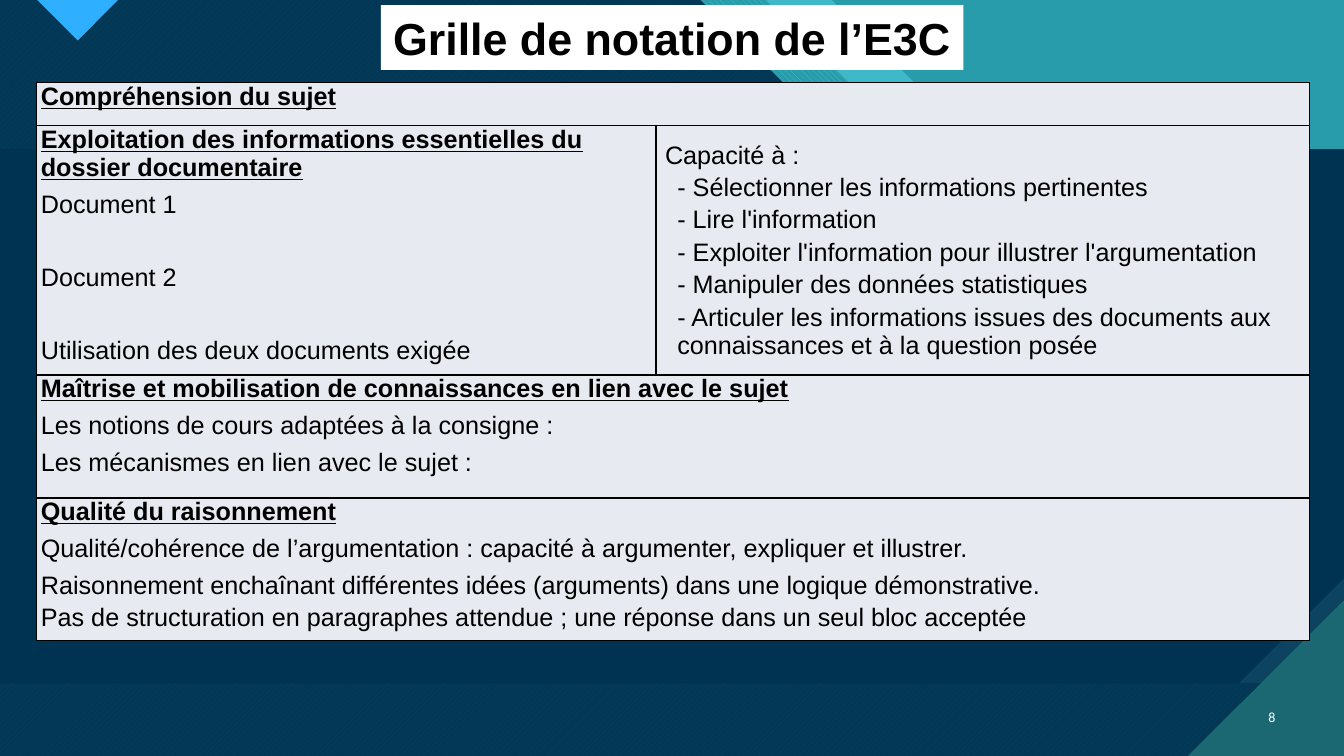
import pptx
import pptx.util
import pptx.dml.color
import pptx.enum.dml
import pptx.enum.text
import pptx.oxml
import pptx.oxml.ns
import lxml.etree

Cm = pptx.util.Cm
Pt = pptx.util.Pt
PATTERN = pptx.enum.dml.MSO_PATTERN
ANCHOR = pptx.enum.text.MSO_ANCHOR
ALIGN = pptx.enum.text.PP_ALIGN
WIDTH, HEIGHT = 33.87, 19.05
COLORS = {
    "teal": "299CAB", "turquoise": "47C3D3", "petrol": "1B6872",
    "navy": "003352", "blue": "2FAFFF", "steel": "0C4360",
    "cell": "E7EAF0", "white": "FFFFFF", "black": "000000",
}


class Painter:
    font = "Arial"

    def __init__(self, deck):
        self.page = deck.slides.add_slide(deck.slide_layouts[5])
        self.shapes = self.page.shapes

    def color(self, name):
        return pptx.dml.color.RGBColor.from_string(COLORS[name])

    def solid(self, fill, name, opacity=100):
        fill.solid()
        fill.fore_color.rgb = self.color(name)
        if opacity < 100:
            tint = fill._xPr.find(".//" + pptx.oxml.ns.qn("a:srgbClr"))
            alpha = lxml.etree.SubElement(tint, pptx.oxml.ns.qn("a:alpha"))
            alpha.set("val", str(opacity * 1000))

    def background(self, name):
        self.solid(self.page.background.fill, name)

    def polygon(self, points, name, back=None, pattern=None, opacity=100):
        corners = [(Cm(x), Cm(y)) for x, y in points]
        builder = self.shapes.build_freeform(*corners[0])
        builder.add_line_segments(corners[1:], close=True)
        shape = builder.convert_to_shape()
        shape.shadow.inherit = False
        shape.line.fill.background()
        if pattern is None:
            self.solid(shape.fill, name, opacity)
        else:
            shape.fill.patterned()
            shape.fill.pattern = pattern
            shape.fill.fore_color.rgb = self.color(name)
            shape.fill.back_color.rgb = self.color(back)

    def style(self, para, size, name="black", bold=False, font=None):
        para.font.size = Pt(size)
        para.font.name = font or self.font
        para.font.bold = bold
        para.font.color.rgb = self.color(name)

    def title(self, text, left, top, width, height):
        box = self.shapes.title
        box.left, box.top, box.width, box.height = map(Cm, (left, top, width, height))
        self.solid(box.fill, "white")
        frame = box.text_frame
        frame.text = text
        frame.word_wrap = False
        frame.auto_size = pptx.enum.text.MSO_AUTO_SIZE.NONE
        frame.vertical_anchor = ANCHOR.MIDDLE
        frame.paragraphs[0].alignment = ALIGN.CENTER
        self.style(frame.paragraphs[0], 32, bold=True)
        self.shapes._spTree.append(box._element)

    def page_number(self, text, left, top, width, height):
        box = self.shapes.add_textbox(*map(Cm, (left, top, width, height)))
        frame = box.text_frame
        frame.text = text
        frame.word_wrap = True
        frame.vertical_anchor = ANCHOR.MIDDLE
        frame.paragraphs[0].alignment = ALIGN.RIGHT
        self.style(frame.paragraphs[0], 10, "white", font="Calibri")

    def table(self, left, top, columns, rows):
        frame = self.shapes.add_table(len(rows), len(columns), Cm(left), Cm(top),
                                      Cm(sum(columns)), Cm(sum(rows)))
        grid = frame.table
        grid.first_row = grid.horz_banding = False
        for column, width in zip(grid.columns, columns):
            column.width = Cm(width)
        for row, height in zip(grid.rows, rows):
            row.height = Cm(height)
        for cell in grid.iter_cells():
            self.borders(cell)
            self.solid(cell.fill, "cell")
        return grid

    def borders(self, cell):
        properties = cell._tc.get_or_add_tcPr()
        for side in ("lnL", "lnR", "lnT", "lnB"):
            properties.append(pptx.oxml.parse_xml(
                f'<a:{side} {pptx.oxml.ns.nsdecls("a")} w="12700"><a:solidFill>'
                f'<a:srgbClr val="{COLORS["black"]}"/></a:solidFill></a:{side}>'))

    def fill_cell(self, cell, lines, margin=0.12, heading=True):
        cell.margin_left = cell.margin_right = Cm(margin)
        cell.margin_top = cell.margin_bottom = 0
        frame = cell.text_frame
        frame.text = "\n".join(text for text, space, indent in lines)
        for number, (para, line) in enumerate(zip(frame.paragraphs, lines)):
            text, space, indent = line
            is_heading = heading and number == 0
            self.style(para, 18, bold=is_heading)
            para.font.underline = is_heading
            para.space_before = Pt(space)
            if indent:
                properties = para._p.get_or_add_pPr()
                properties.set("marL", str(Cm(indent)))
                properties.set("indent", "0")


def draw_background(painter):
    bottom = [(WIDTH, HEIGHT), (0, HEIGHT)]
    painter.background("teal")
    painter.polygon([(0, 0), (20.96, 0), (28.5, 7.54), (31.34, 7.54), (WIDTH, 10.06)]
                    + bottom, "turquoise", opacity=74)
    painter.polygon([(0, 0), (19.3, 0), (26.87, 7.54), (30.07, 7.54), (WIDTH, 11.35)]
                    + bottom, "turquoise", "teal", PATTERN.WIDE_DOWNWARD_DIAGONAL)
    slope = [(0, 0), (17.65, 0), (25.2, 7.54), (28.4, 7.54), (WIDTH, 13)] + bottom
    painter.polygon(slope, "turquoise", "petrol", PATTERN.WIDE_UPWARD_DIAGONAL)
    painter.polygon(slope, "navy", opacity=90)
    painter.polygon([(0.94, 0), (1.96, 1.02), (2.97, 0)],
                    "blue", "petrol", PATTERN.DARK_HORIZONTAL)
    top, base, snip = 3.76, 17.22, 2.65
    painter.polygon([(0, top), (WIDTH, top), (WIDTH, base), (0, base)],
                    "steel", "petrol", PATTERN.DARK_VERTICAL)
    painter.polygon([(0, top), (WIDTH, top), (WIDTH, base - snip),
                     (WIDTH - snip, base), (0, base)], "navy")
    painter.polygon([(29.95, HEIGHT), (WIDTH, HEIGHT), (WIDTH, 15.14)],
                    "petrol", "turquoise", PATTERN.DARK_HORIZONTAL)


def draw_grading_grid(painter):
    grid = painter.table(0.91, 2.08, [15.62, 16.48], [1.09, 6.02, 3.1, 3.38])
    for row in (0, 2, 3):
        grid.cell(row, 0).merge(grid.cell(row, 1))
    painter.fill_cell(grid.cell(0, 0), [("Compréhension du sujet", 6, 0)])
    painter.fill_cell(grid.cell(1, 0), [
        ("Exploitation des informations essentielles du dossier documentaire", 6, 0),
        ("Document 1", 6, 0),
        ("Document 2", 32, 0),
        ("Utilisation des deux documents exigée", 32, 0),
    ])
    skills = [
        "- Sélectionner les informations pertinentes",
        "- Lire l'information",
        "- Exploiter l'information pour illustrer l'argumentation",
        "- Manipuler des données statistiques",
        "- Articuler les informations issues des documents aux connaissances"
        " et à la question posée",
    ]
    grid.cell(1, 1).vertical_anchor = ANCHOR.MIDDLE
    painter.fill_cell(grid.cell(1, 1), [("Capacité à :", 3, 0.2)]
                      + [(skill, 3, 0.51) for skill in skills], 0.03, heading=False)
    painter.fill_cell(grid.cell(2, 0), [
        ("Maîtrise et mobilisation de connaissances en lien avec le sujet", 6, 0),
        ("Les notions de cours adaptées à la consigne :", 6, 0),
        ("Les mécanismes en lien avec le sujet :", 6, 0),
    ])
    painter.fill_cell(grid.cell(3, 0), [
        ("Qualité du raisonnement", 6, 0),
        ("Qualité/cohérence de l’argumentation : capacité à argumenter,"
         " expliquer et illustrer.", 6, 0),
        ("Raisonnement enchaînant différentes idées (arguments) dans une logique"
         " démonstrative.", 6, 0),
        ("Pas de structuration en paragraphes attendue ; une réponse dans un seul"
         " bloc acceptée", 3, 0),
    ])


def main():
    deck = pptx.Presentation()
    deck.slide_width, deck.slide_height = Cm(WIDTH), Cm(HEIGHT)
    painter = Painter(deck)
    draw_background(painter)
    painter.page_number("8", 31.27, 17.55, 1.12, 1.02)
    draw_grading_grid(painter)
    painter.title("Grille de notation de l’E3C", 9.6, 0.13, 14.68, 1.63)
    deck.save("out.pptx")


if __name__ == "__main__":
    main()
